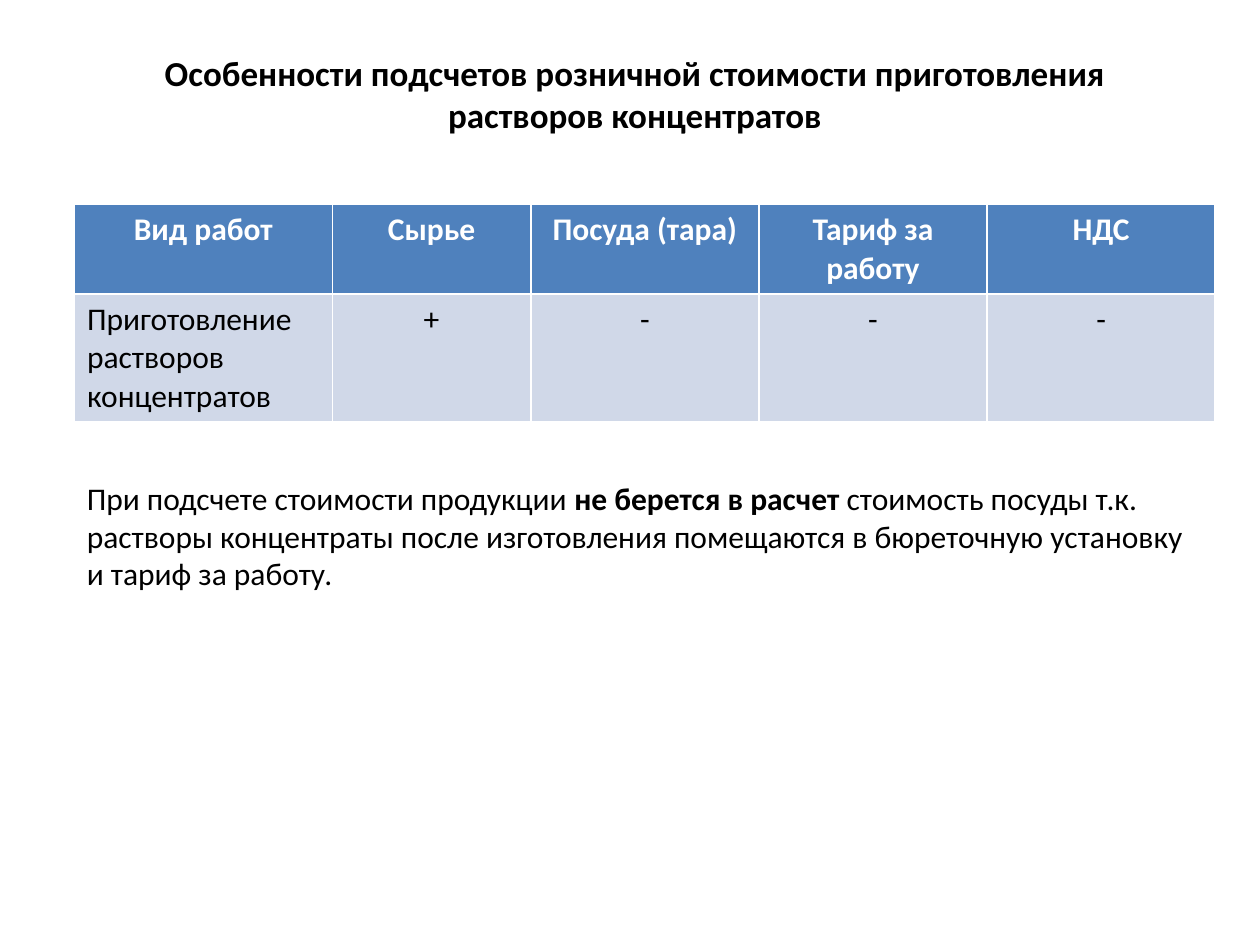
from dataclasses import dataclass

from pptx import Presentation
from pptx import util as u
from pptx.dml import color as dml
from pptx.enum import text


@dataclass(frozen=True)
class Theme:
    font: str = "Calibri"
    title_size: int = 20
    body_size: int = 18
    ink: str = "000000"
    paper: str = "FFFFFF"
    header: str = "4F81BD"
    band: str = "D0D8E8"


class DeckBuilder:
    """Builds styled elements on the current page."""

    def __init__(self, deck, theme):
        self.deck = deck
        self.theme = theme
        self.page = None

    def add_page(self):
        self.page = self.deck.slides.add_slide(self.deck.slide_layouts[5])

    def add_spans(self, frame, spans, size, color, align):
        para = frame.paragraphs[0]
        para.alignment = align
        for wording, bold in spans:
            span = para.add_run()
            span.text = wording
            formats = {"name": self.theme.font, "size": u.Pt(size), "bold": bold}
            for key, value in formats.items():
                setattr(span.font, key, value)
            span.font.color.rgb = dml.RGBColor.from_string(color)

    def place_text(self, box, area, spans, size, align):
        for key, value in zip(("left", "top", "width", "height"), area):
            setattr(box, key, u.Cm(value))
        formats = {
            "word_wrap": True,
            "auto_size": text.MSO_AUTO_SIZE.NONE,
            "vertical_anchor": text.MSO_ANCHOR.TOP,
        }
        for key, value in formats.items():
            setattr(box.text_frame, key, value)
        self.add_spans(box.text_frame, spans, size, self.theme.ink, align)

    def title(self, area, wording):
        self.place_text(self.page.shapes.title, area, [(wording, True)],
                        self.theme.title_size, text.PP_ALIGN.CENTER)

    def body(self, area, spans):
        box = self.page.shapes.add_textbox(*map(u.Cm, area))
        self.place_text(box, area, spans, self.theme.body_size, text.PP_ALIGN.LEFT)

    def table(self, left, top, widths, heights, rows):
        area = (left, top, sum(widths), sum(heights))
        table = self.page.shapes.add_table(
            len(rows), len(widths), *map(u.Cm, area)).table
        for column, width in zip(table.columns, widths):
            column.width = u.Cm(width)
        for row, height in zip(table.rows, heights):
            row.height = u.Cm(height)
        for r, row in enumerate(rows):
            is_header = r == 0
            fill = self.theme.header if is_header else self.theme.band
            color = self.theme.paper if is_header else self.theme.ink
            for c, wording in enumerate(row):
                is_label = c == 0 and not is_header
                align = text.PP_ALIGN.LEFT if is_label else text.PP_ALIGN.CENTER
                cell = table.cell(r, c)
                cell.fill.solid()
                cell.fill.fore_color.rgb = dml.RGBColor.from_string(fill)
                self.add_spans(cell.text_frame, [(wording, is_header)],
                               self.theme.body_size, color, align)


def main():
    deck = Presentation()
    deck.slide_width, deck.slide_height = u.Cm(25.4), u.Cm(19.05)
    builder = DeckBuilder(deck, Theme())
    builder.add_page()
    left = 1.5
    builder.title(
        (left, 0.91, 22.6, 1.96),
        "Особенности подсчетов розничной стоимости приготовления растворов концентратов",
    )
    builder.table(
        left, 4.12, [5.2, 4] + [4.6] * 3, [1.78, 2.54],
        [
            ["Вид работ", "Сырье", "Посуда (тара)", "Тариф за работу", "НДС"],
            ["Приготовление растворов концентратов", "+", "-", "-", "-"],
        ],
    )
    builder.body(
        (left, 9.53, 23, 3.33),
        [
            ("При подсчете стоимости продукции ", False),
            ("не берется в расчет", True),
            (" стоимость посуды т.к. растворы концентраты после изготовления "
             "помещаются в бюреточную установку и тариф за работу.", False),
        ],
    )
    deck.save("out.pptx")


if __name__ == "__main__":
    main()
